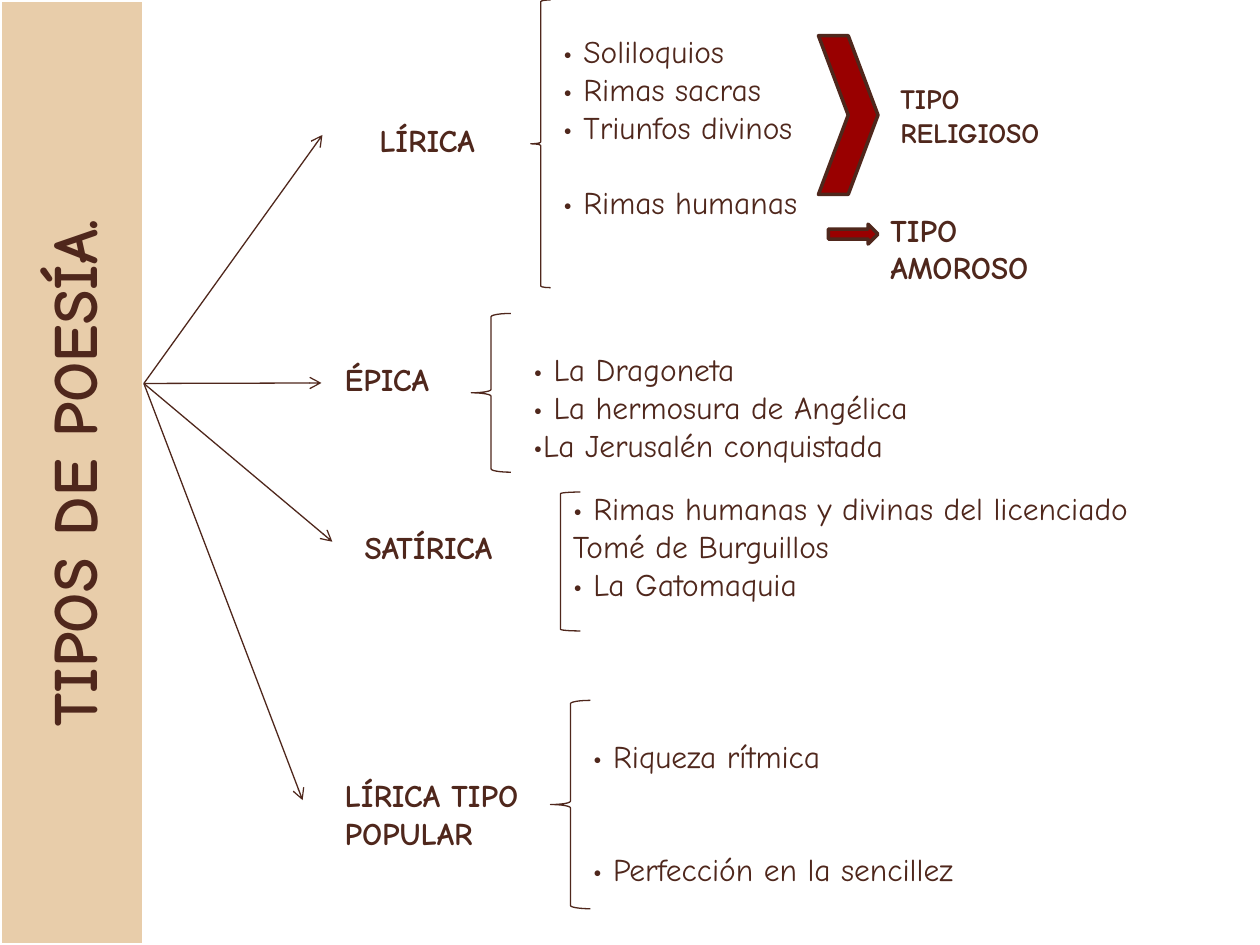
import pptx
import pptx.util
import pptx.dml.color
import pptx.enum.shapes
import pptx.enum.text
import pptx.oxml.ns
from lxml import etree
from pptx.util import Cm, Pt

SHAPES = pptx.enum.shapes.MSO_SHAPE
ALIGN = pptx.enum.text.PP_ALIGN
ANCHOR = pptx.enum.text.MSO_ANCHOR
qn = pptx.oxml.ns.qn


def color(value):
    return pptx.dml.color.RGBColor.from_string(value)


class PoetryPage:
    font = "Comic Neue"
    ink = "4F271C"
    sand = "E8CDAA"
    red = "990000"
    white = "FFFFFF"
    line_pitch = 21.5

    def __init__(self, deck):
        self.page = deck.slides.add_slide(deck.slide_layouts[5])

    def style(self, para, size, bold):
        para.font.name = self.font
        para.font.size = Pt(size)
        para.font.bold = bold
        para.font.color.rgb = color(self.ink)

    def outline(self, shape, value, width):
        shape.line.color.rgb = color(value)
        shape.line.width = Pt(width)

    def title(self, text, width, height):
        box = self.page.shapes.title
        box.left, box.top = Cm((width - height) / 2), Cm((height - width) / 2)
        box.width, box.height = Cm(height), Cm(width)
        box.rotation = 270
        box.fill.solid()
        box.fill.fore_color.rgb = color(self.sand)
        self.outline(box, self.white, 2)
        frame = box.text_frame
        frame.text = text
        frame.auto_size = pptx.enum.text.MSO_AUTO_SIZE.NONE
        frame.vertical_anchor = ANCHOR.MIDDLE
        frame.paragraphs[0].alignment = ALIGN.CENTER
        self.style(frame.paragraphs[0], 36, True)

    def text(self, lines, left, top, width, height, size=18, bold=False, gaps=None):
        box = self.page.shapes.add_textbox(Cm(left), Cm(top), Cm(width), Cm(height))
        frame = box.text_frame
        frame.word_wrap = True
        for index, line in enumerate(lines):
            para = frame.paragraphs[0] if index == 0 else frame.add_paragraph()
            para.text = line
            self.style(para, size, bold)
            if gaps and index in gaps:
                para.space_before = Pt(gaps[index] * self.line_pitch)
        return frame

    def label(self, text, left, top, width, height, size=18):
        return self.text([text], left, top, width, height, size, True)

    def centred_label(self, text, left, top, width, height):
        frame = self.label(text, left, top, width, height)
        frame.vertical_anchor = ANCHOR.MIDDLE
        frame.paragraphs[0].alignment = ALIGN.CENTER

    def shape(self, kind, left, top, width, height, fill=None, line_width=0.75):
        shape = self.page.shapes.add_shape(kind, Cm(left), Cm(top), Cm(width), Cm(height))
        shape.shadow.inherit = False
        if fill:
            shape.fill.solid()
            shape.fill.fore_color.rgb = color(fill)
        else:
            shape.fill.background()
        self.outline(shape, self.ink, line_width)

    def arrow(self, start, end):
        arrow = self.page.shapes.add_connector(
            pptx.enum.shapes.MSO_CONNECTOR.STRAIGHT, *map(Cm, start + end))
        self.outline(arrow, self.ink, 0.75)
        etree.SubElement(arrow.line._get_or_add_ln(), qn("a:tailEnd"), type="arrow")
        etree.SubElement(arrow._element.spPr, qn("a:effectLst"))


def main():
    deck = pptx.Presentation()
    deck.slide_width, deck.slide_height = Cm(25.4), Cm(19.05)
    poetry = PoetryPage(deck)
    band_width = 2.9
    poetry.title("TIPOS DE POESÍA.", band_width, 19.05)

    hub = (band_width, 7.73)
    for tip in [(6.5, 2.72), (6.48, 7.72), (6.7, 10.92), (6.1, 16.13)]:
        poetry.arrow(hub, tip)

    poetry.centred_label("LÍRICA", 6.91, 2.13, 3.4, 1.4)
    poetry.label("ÉPICA", 6.7, 7.14, 3, 1.02)
    poetry.label("SATÍRICA", 7.1, 10.52, 4.4, 1.02)
    poetry.label("LÍRICA TIPO POPULAR", 6.7, 15.52, 4.2, 2.57)

    poetry.shape(SHAPES.LEFT_BRACE, 10.7, 0, 0.4, 5.8)
    poetry.shape(SHAPES.LEFT_BRACE, 9.5, 6.32, 0.8, 3.2)
    poetry.shape(SHAPES.LEFT_BRACKET, 11.3, 9.92, 0.4, 2.8)
    poetry.shape(SHAPES.LEFT_BRACE, 11.1, 14.12, 0.8, 4.2)

    poetry.text(["• Soliloquios", "• Rimas sacras", "• Triunfos divinos", "• Rimas humanas"],
                11.1, 0.53, 5.6, 4.88, gaps={3: 1})
    poetry.text(["• La Dragoneta", "• La hermosura de Angélica", "•La Jerusalén conquistada"],
                10.5, 6.94, 8.6, 2.57)
    poetry.text(["• Rimas humanas y divinas del licenciado Tomé de Burguillos", "• La Gatomaquia"],
                11.3, 9.74, 12.8, 2.57)
    poetry.text(["• Riqueza rítmica", "• Perfección en la sencillez"],
                11.7, 14.74, 10.2, 3.33, gaps={1: 2})

    poetry.shape(SHAPES.CHEVRON, 16.5, 0.72, 1.2, 3.2, poetry.red, 2)
    poetry.label("TIPO RELIGIOSO", 17.9, 1.52, 4, 1.62, 16)
    poetry.shape(SHAPES.RIGHT_ARROW, 16.7, 4.52, 1, 0.4, poetry.red, 2)
    poetry.label("TIPO AMOROSO", 17.7, 4.12, 4.6, 1.8)

    deck.save("out.pptx")


if __name__ == "__main__":
    main()
